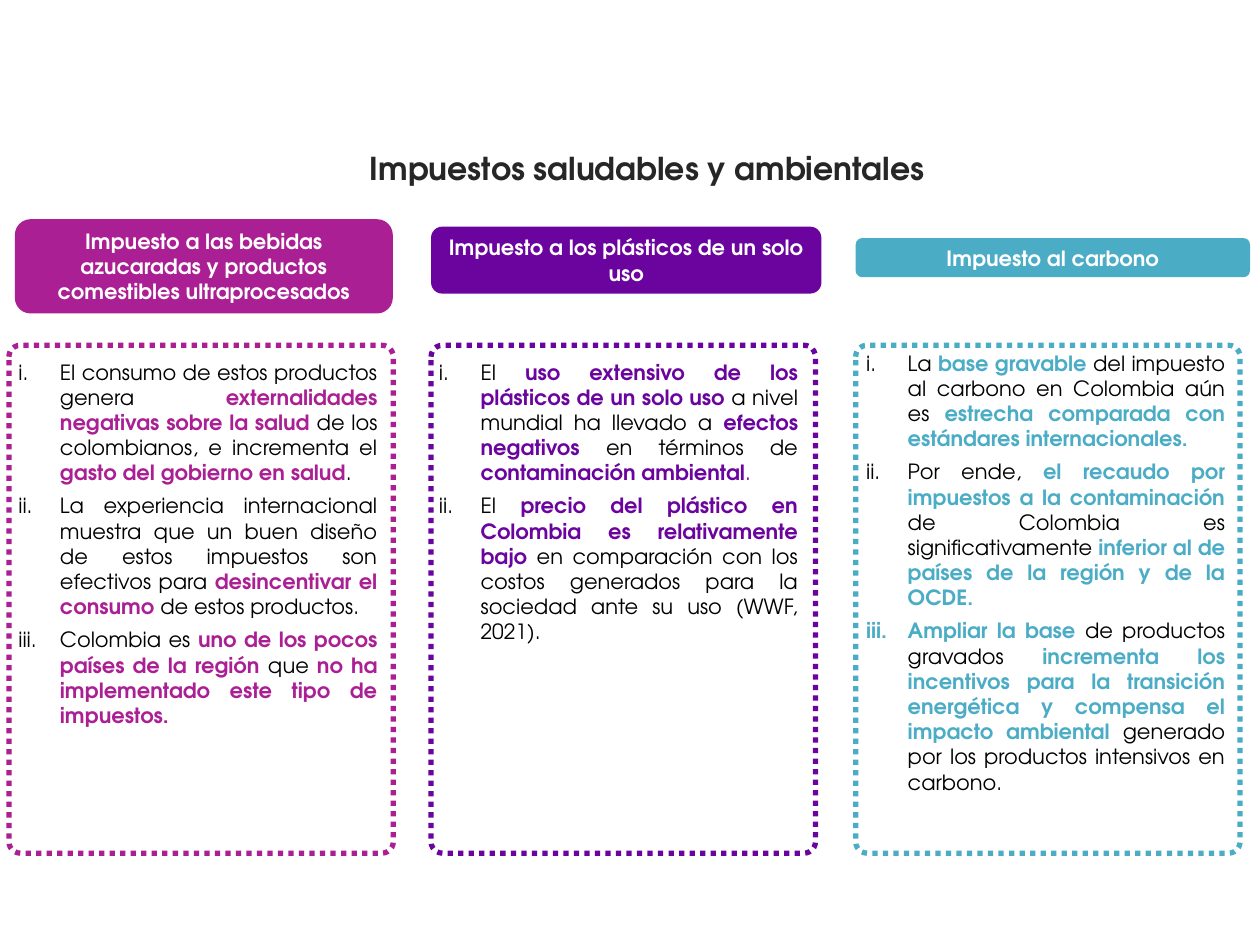
from lxml.etree import SubElement
from pptx import Presentation
from pptx.dml.color import RGBColor
from pptx.enum.dml import MSO_LINE
from pptx.enum.shapes import MSO_SHAPE
from pptx.enum.text import MSO_ANCHOR, PP_ALIGN
from pptx.oxml.ns import qn
from pptx.util import Cm, Pt

FONT = "TeX Gyre Adventor"
HUES = {"pink": "AA1F93", "plum": "6B049E", "teal": "4BACC6",
        "black": "000000", "white": "FFFFFF", "grey": "262626"}


def add_run(para, text, hue, size=12, bold=True):
    run = para.add_run()
    run.text = text
    run.font.name = FONT
    run.font.size = Pt(size)
    run.font.bold = bold
    run.font.color.rgb = RGBColor.from_string(HUES[hue])


def set_frame(frame, anchor):
    frame.word_wrap = True
    frame.vertical_anchor = anchor
    frame.margin_left = frame.margin_right = Cm(0.19)
    frame.margin_top = frame.margin_bottom = Cm(0.1)


# Each column: hue, panel left, header box, header, list box, points.
# A run that starts with * is bold in the hue, with ~ only in the hue.
COLS = [
    ("pink", 0.18, (0.3, 4.42, 7.62, 1.9),
     "Impuesto a las bebidas azucaradas y productos comestibles ultraprocesados",
     (0.18, 7.14, 7.62, 7.72), [
         ["El consumo de estos productos genera ",
          "*externalidades negativas sobre la salud ",
          "de los colombianos, e incrementa el ",
          "*gasto del gobierno en salud", "."],
         ["La experiencia internacional muestra que un buen diseño de estos "
          "impuestos son efectivos para ",
          "*desincentivar el consumo ", "de estos productos. "],
         ["Colombia es ", "*uno de los pocos países de la región ", "que ",
          "*no ha implementado este tipo de impuestos. "]]),
    ("plum", 8.69, (8.69, 4.57, 7.87, 1.35),
     "Impuesto a los plásticos de un solo uso",
     (8.66, 7.14, 7.62, 6.02), [
         ["El ", "*uso extensivo de los plásticos de un solo uso ",
          "a nivel mundial ha llevado a ", "*efectos negativos ",
          "en términos de ", "*contaminación ambiental", "~."],
         ["El ", "*precio del plástico en Colombia es relativamente bajo ",
          "en comparación con los costos generados para la sociedad ante "
          "su uso (WWF, 2021)."]]),
    ("teal", 17.25, (17.25, 4.8, 7.95, 0.79),
     "Impuesto al carbono",
     (17.27, 6.96, 7.62, 9.27), [
         ["La ", "*base gravable ",
          "del impuesto al carbono en Colombia aún es ",
          "*estrecha comparada con estándares internacionales."],
         ["Por ende, ", "*el recaudo por impuestos a la contaminación ",
          "de Colombia es significativamente ",
          "*inferior al de países de la región y de la OCDE. "],
         ["*Ampliar la base ", "de productos gravados ",
          "*incrementa los incentivos para la transición energética y "
          "compensa el impacto ambiental ",
          "generado por los productos intensivos en carbono."]]),
]

deck = Presentation()
deck.slide_width, deck.slide_height = Cm(25.4), Cm(19.05)
slide = deck.slides.add_slide(deck.slide_layouts[5])
shapes = slide.shapes

# Title
title = shapes.title
title.left, title.top = Cm(2.54), Cm(2.87)
title.width, title.height = Cm(21), Cm(1.02)
set_frame(title.text_frame, MSO_ANCHOR.MIDDLE)
para = title.text_frame.paragraphs[0]
para.alignment = PP_ALIGN.CENTER
add_run(para, "Impuestos saludables y ambientales", "grey", 18)

for hue, left, head_box, head, list_box, points in COLS:
    color = RGBColor.from_string(HUES[hue])

    # Header
    tab = shapes.add_shape(MSO_SHAPE.ROUNDED_RECTANGLE, *map(Cm, head_box))
    tab.shadow.inherit = False
    tab.fill.solid()
    tab.fill.fore_color.rgb = color
    tab.line.fill.background()
    set_frame(tab.text_frame, MSO_ANCHOR.MIDDLE)
    para = tab.text_frame.paragraphs[0]
    para.alignment = PP_ALIGN.CENTER
    add_run(para, head, "white")

    # Numbered points
    frame = shapes.add_textbox(*map(Cm, list_box)).text_frame
    set_frame(frame, MSO_ANCHOR.TOP)
    for i, point in enumerate(points):
        para = frame.add_paragraph() if i else frame.paragraphs[0]
        para.alignment = PP_ALIGN.JUSTIFY
        para.space_after = Pt(4.5)
        props = para._p.get_or_add_pPr()
        props.set("marL", str(Cm(0.84)))
        props.set("indent", str(-Cm(0.84)))
        SubElement(props, qn("a:buFont"), typeface="+mj-lt")
        SubElement(props, qn("a:buAutoNum"), type="romanLcPeriod")
        for text in point:
            tone = hue if text[0] in "*~" else "black"
            add_run(para, text.lstrip("*~"), tone, bold=text[0] == "*")

    # Dotted panel
    panel = shapes.add_shape(MSO_SHAPE.ROUNDED_RECTANGLE,
                             Cm(left), Cm(6.96), Cm(7.75), Cm(10.24))
    panel.adjustments[0] = 0.03
    panel.shadow.inherit = False
    panel.fill.background()
    panel.line.color.rgb = color
    panel.line.width = Pt(3)
    # ROUND_DOT is written as sysDot
    panel.line.dash_style = MSO_LINE.ROUND_DOT

deck.save("out.pptx")
